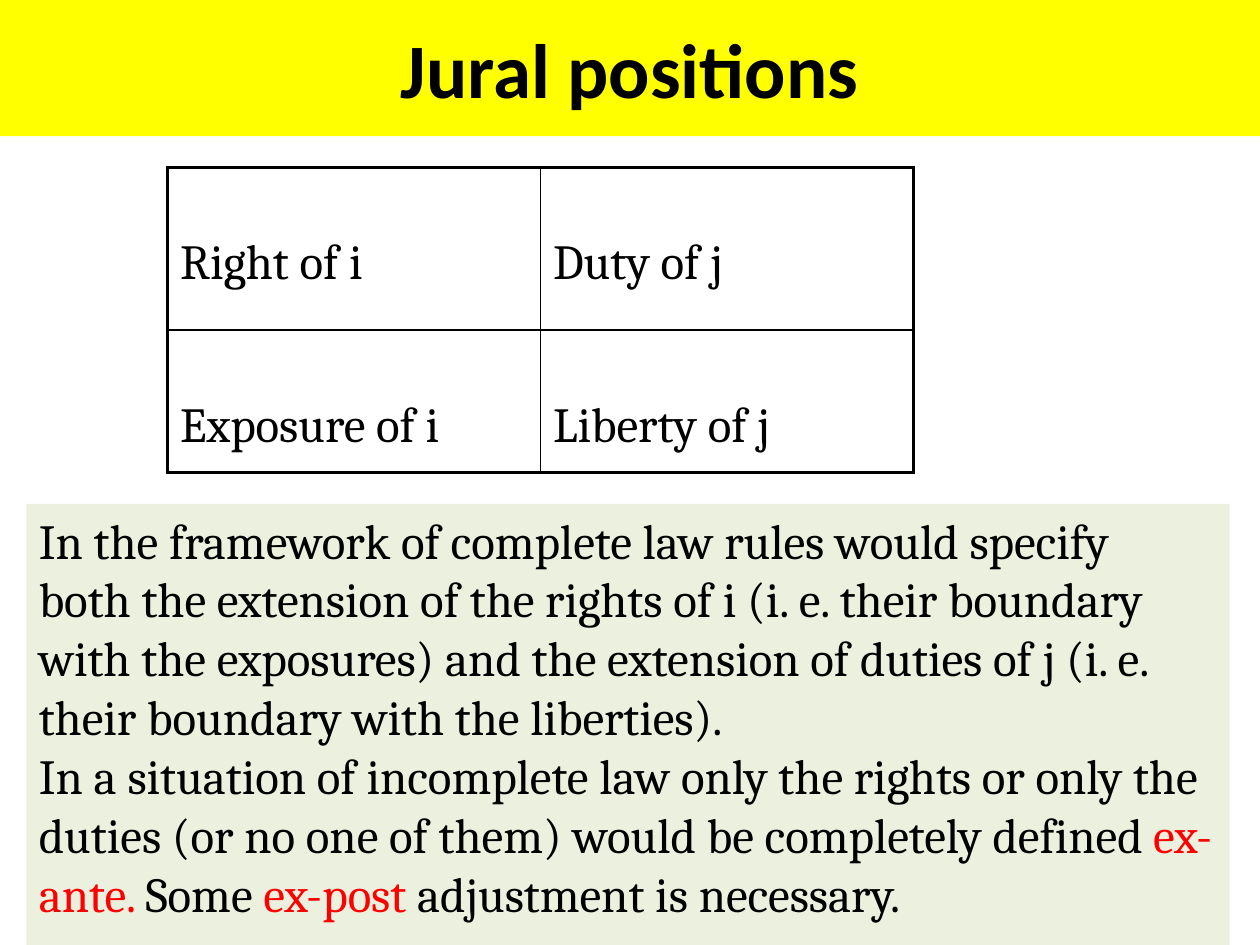
from typing import NamedTuple

from lxml import etree
from pptx import Presentation
from pptx.dml.color import RGBColor
from pptx.enum import text
from pptx.oxml import ns
from pptx.util import Inches, Pt

BLACK = RGBColor(0x00, 0x00, 0x00)
WHITE = RGBColor(0xFF, 0xFF, 0xFF)
YELLOW = RGBColor(0xFF, 0xFF, 0x00)
PALE_GREEN = RGBColor(0xEB, 0xF1, 0xDE)
RED = RGBColor(0xFF, 0x00, 0x00)

OUTER_LINE, INNER_LINE = Pt(2.25), Pt(1)


class Span(NamedTuple):
    wording: str
    color: RGBColor = BLACK


POSITIONS = [
    ["Right of i", "Duty of j"],
    ["Exposure of i", "Liberty of j"],
]
ROW_HEIGHTS = [1.29, 1.13]
COLUMN_WIDTH = 2.96

EXPLANATION = [
    [Span("In the framework of complete law rules would specify  both the "
          "extension of the rights of i (i. e. their boundary with the "
          "exposures) and the extension of duties of j (i. e. their boundary "
          "with the liberties).")],
    [Span("In a situation of incomplete law only the rights or only the duties "
          "(or no one of them) would be completely defined "),
     Span("ex-ante. ", RED),
     Span("Some "),
     Span("ex-post ", RED),
     Span("adjustment is necessary.")],
]


def set_cell_borders(cell, widths: dict[str, int]) -> None:
    """Draw black borders; they must precede the cell's fill in the XML."""
    properties = cell._tc.get_or_add_tcPr()
    for position, (side, width) in enumerate(widths.items()):
        line = etree.Element(ns.qn(f"a:{side}"), w=str(int(width)))
        fill = etree.SubElement(line, ns.qn("a:solidFill"))
        etree.SubElement(fill, ns.qn("a:srgbClr"), val=str(BLACK))
        properties.insert(position, line)


def add_title(slide, wording: str) -> None:
    title = slide.shapes.title
    title.left, title.top = Inches(0), Inches(0)
    title.width, title.height = Inches(10), Inches(1.08)
    title.fill.solid()
    title.fill.fore_color.rgb = YELLOW
    frame = title.text_frame
    frame.text = wording
    frame.vertical_anchor = text.MSO_ANCHOR.MIDDLE
    heading = frame.paragraphs[0]
    heading.alignment = text.PP_ALIGN.CENTER
    heading.font.name, heading.font.size = "Calibri", Pt(44)
    heading.font.bold = True
    heading.font.color.rgb = BLACK


def add_positions(slide, rows: list[list[str]]) -> None:
    row_count, column_count = len(rows), len(rows[0])
    table = slide.shapes.add_table(
        row_count, column_count, Inches(1.33), Inches(1.33),
        Inches(COLUMN_WIDTH * column_count), Inches(sum(ROW_HEIGHTS))).table
    table.first_row = table.horz_banding = False
    for column in table.columns:
        column.width = Inches(COLUMN_WIDTH)
    for r, labels in enumerate(rows):
        table.rows[r].height = Inches(ROW_HEIGHTS[r])
        for c, label in enumerate(labels):
            cell = table.cell(r, c)
            cell.text = label
            cell.margin_top = Inches(0.54)
            cell.fill.solid()
            cell.fill.fore_color.rgb = WHITE
            paragraph = cell.text_frame.paragraphs[0]
            paragraph.alignment = text.PP_ALIGN.JUSTIFY
            paragraph.font.name, paragraph.font.size = "Cambria", Pt(28)
            paragraph.font.color.rgb = BLACK
            at_edge = {"lnL": c == 0, "lnR": c == column_count - 1,
                       "lnT": r == 0, "lnB": r == row_count - 1}
            set_cell_borders(cell, {side: OUTER_LINE if edge else INNER_LINE
                                    for side, edge in at_edge.items()})


def add_explanation(slide, paragraphs: list[list[Span]]) -> None:
    panel = slide.shapes.add_textbox(
        Inches(0.21), Inches(4), Inches(9.55), Inches(3.5))
    panel.fill.solid()
    panel.fill.fore_color.rgb = PALE_GREEN
    frame = panel.text_frame
    frame.word_wrap = True
    for index, spans in enumerate(paragraphs):
        paragraph = frame.add_paragraph() if index else frame.paragraphs[0]
        paragraph.font.name, paragraph.font.size = "Cambria", Pt(28)
        for span in spans:
            run = paragraph.add_run()
            run.text = span.wording
            run.font.color.rgb = span.color


def main() -> None:
    deck = Presentation()
    deck.slide_width, deck.slide_height = Inches(10), Inches(7.5)
    slide = deck.slides.add_slide(deck.slide_layouts.get_by_name("Title Only"))
    add_title(slide, "Jural positions")
    add_positions(slide, POSITIONS)
    add_explanation(slide, EXPLANATION)
    deck.save("out.pptx")


if __name__ == "__main__":
    main()
